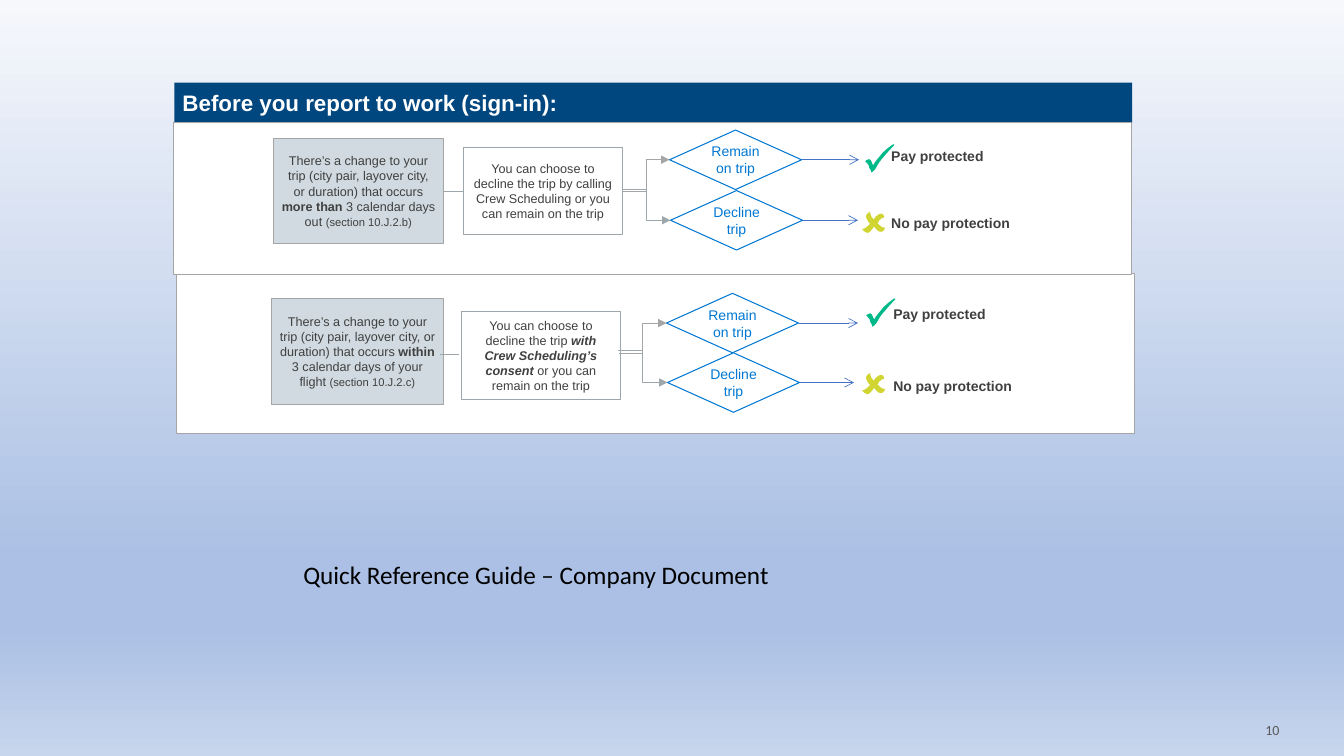
from lxml import etree
from pptx import Presentation
from pptx.dml.color import RGBColor
from pptx.enum.shapes import MSO_CONNECTOR, MSO_SHAPE
from pptx.enum.text import MSO_ANCHOR, MSO_AUTO_SIZE, PP_ALIGN
from pptx.oxml.ns import qn
from pptx.util import Pt

RECT, STEP, GEM = MSO_SHAPE.RECTANGLE, MSO_SHAPE.FLOWCHART_PROCESS, MSO_SHAPE.FLOWCHART_DECISION
LINE, ELBOW = MSO_CONNECTOR.STRAIGHT, MSO_CONNECTOR.ELBOW
LEFT, MID, RIGHT = PP_ALIGN.LEFT, PP_ALIGN.CENTER, PP_ALIGN.RIGHT

PX = 9144
INSET = 8
HUES = {
    "navy": "00467F", "blue": "0078D2", "arrow": "4472C4", "edge": "A5A5A5",
    "steel": "9DA6AB", "mist": "D0DAE0", "white": "FFFFFF", "black": "000000",
    "ink": "404040", "grey": "595959", "green": "00B989", "lime": "D1D532",
}
SKY = [(0, "F6F8FC"), (74, "ABC0E4"), (83, "ABC0E4"), (100, "C7D5ED")]
HEAD = ("Before you report to work (sign-in):", (173, 82, 950, 40))
NOTE = ("Quick Reference Guide – Company Document", (291, 550, 617, 40))
PAGE = ("10", (1233, 716, 36, 17))
CAUSE = "There’s a change to your trip (city pair, layover city, or duration) that occurs "

TICK = [(28, 0), (28, 0, 29, 1, 29, 1), (26, 4, 23, 7, 19, 12), (15, 16, 12, 21, 10, 25),
        (8, 27, 7, 28, 6, 28), (6, 27, 6, 26, 5, 25), (4, 23), (4, 21, 3, 20, 2, 19),
        (1, 18, 1, 17, 0, 17), (1, 16, 3, 15, 4, 15), (5, 15, 6, 16, 7, 19), (8, 21),
        (10, 17, 14, 13, 17, 9), (21, 5, 25, 2, 28, 0)]
CROSS = [(12, 15), (11, 16), (9, 19, 7, 21, 6, 21), (4, 21, 2, 20, 0, 17), (1, 17),
         (3, 17, 5, 15, 8, 12), (7, 11), (5, 8, 4, 6, 4, 5), (4, 3, 5, 2, 8, 0),
         (8, 2, 9, 5, 11, 7), (11, 8), (12, 7), (14, 4, 17, 2, 19, 2),
         (20, 2, 22, 3, 22, 6), (21, 6, 20, 6, 19, 7), (18, 8, 16, 9, 16, 11), (15, 12),
         (16, 12), (18, 14, 20, 16, 23, 16), (22, 19, 20, 20, 19, 20),
         (17, 20, 15, 19, 13, 16), (12, 15)]

CASES = [
    {"panel": (175, 271, 950, 159), "cause": (269, 296, 171, 105), "choice": (458, 309, 157, 87),
     "why": [(CAUSE, ""), ("within ", "b"), ("3 calendar days of your flight ", ""), ("(section 10.J.2.c)", "s")],
     "pick": [("You can choose to decline the trip ", ""), ("with Crew Scheduling’s consent ", "bi"),
              ("or you can remain on the trip", "")],
     "link": (436, 352, 455, 352),
     "ends": [{"gem": (661, 291), "from": (614, 351), "tip": 851, "label": (878, 301), "icon": (859, 296)},
              {"gem": (662, 350), "from": (613, 348), "tip": 847, "label": (878, 368), "icon": (855, 370)}]},
    {"panel": (172, 122, 950, 150), "cause": (271, 137, 169, 105), "choice": (460, 146, 157, 87),
     "why": [(CAUSE, ""), ("more than ", "b"), ("3 calendar days out ", ""), ("(section 10.J.2.b)", "s")],
     "pick": [("You can choose to decline the trip by calling Crew Scheduling or you can remain on the trip", "")],
     "link": None,
     "ends": [{"gem": (664, 129), "from": (618, 190), "tip": 852, "label": (876, 145), "icon": (858, 143)},
              {"gem": (665, 189), "from": (617, 188), "tip": 851, "label": (876, 206), "icon": (855, 210)}]},
]
KINDS = [("Remain on trip", "Pay protected", (110, 20), TICK, "green", "edge"),
         ("Decline trip", "No pay protection", (140, 30), CROSS, "lime", "steel")]


def hue(name):
    return RGBColor.from_string(HUES[name])


def emu(*vals):
    return [round(v * PX) for v in vals]


def write(shape, runs, size, color, align=MID, font="Arial", bold=False, inset=INSET, anchor=MSO_ANCHOR.MIDDLE):
    frame = shape.text_frame
    frame.auto_size = MSO_AUTO_SIZE.NONE
    frame.word_wrap = True
    frame.vertical_anchor = anchor
    frame.margin_left = frame.margin_right = frame.margin_top = frame.margin_bottom = inset * PX
    para = frame.paragraphs[0]
    para.alignment = align
    for text, style in runs:
        run = para.add_run()
        run.text = text
        run.font.name = font
        run.font.size = Pt(size - 1 if "s" in style else size)
        run.font.bold = bold or "b" in style
        run.font.italic = "i" in style
        run.font.color.rgb = hue(color)


def block(kind, box, fill, edge, width=0.75):
    shape = shapes.add_shape(kind, *emu(*box))
    shape.shadow.inherit = False
    shape.fill.solid()
    shape.fill.fore_color.rgb = hue(fill)
    shape.line.color.rgb = hue(edge)
    shape.line.width = Pt(width)
    return shape


def wire(kind, ends, color, width, head=None):
    line = shapes.add_connector(kind, *emu(*ends))
    line.line.color.rgb = hue(color)
    line.line.width = Pt(width)
    if head:
        etree.SubElement(line.line._get_or_add_ln(), qn("a:tailEnd"), type=head)
    etree.SubElement(line._element.spPr, qn("a:effectLst"))
    return line


def trace(path):
    pts = [path[0]]
    for seg in path[1:]:
        if len(seg) == 2:
            pts.append(seg)
            continue
        ctrl = [pts[-1], seg[:2], seg[2:4], seg[4:]]
        for t in (0.25, 0.5, 0.75, 1):
            mix = ((1 - t) ** 3, 3 * t * (1 - t) ** 2, 3 * t * t * (1 - t), t ** 3)
            pts.append(tuple(sum(m * p[a] for m, p in zip(mix, ctrl)) for a in (0, 1)))
    return pts


def icon(path, x, y, color):
    pts = [emu(x + u, y + v) for u, v in trace(path)]
    pen = shapes.build_freeform(*pts[0], scale=1.0)
    pen.add_line_segments(pts[1:], close=True)
    mark = pen.convert_to_shape()
    mark.shadow.inherit = False
    mark.fill.solid()
    mark.fill.fore_color.rgb = hue(color)
    mark.line.fill.background()


def draw(case):
    block(RECT, case["panel"], "white", "edge")
    cause = block(RECT, case["cause"], "mist", "edge")
    write(cause, case["why"], 9, "ink")
    choice = block(STEP, case["choice"], "white", "steel")
    write(choice, case["pick"], 9, "ink")
    link = wire(LINE, case["link"] or (0, 0, 0, 0), "steel", 0.5)
    if not case["link"]:
        link.begin_connect(cause, 3)
        link.end_connect(choice, 1)
    for end, (ask, result, size, path, color, edge) in zip(case["ends"], KINDS):
        x, y = end["gem"]
        gem = block(GEM, (x, y, 131, 59), "white", "blue")
        write(gem, [(ask, "")], 10, "blue")
        label = block(RECT, end["label"] + size, "white", "white", 1.5)
        write(label, [(result, "")], 10, "ink", LEFT, bold=True)
        mid = y + 29.5
        fork = wire(ELBOW, end["from"] + (x, mid), edge, 0.75, "triangle")
        fork.end_connect(gem, 1)
        out = wire(LINE, (x + 131, mid, end["tip"], mid), "arrow", 0.5, "arrow")
        out.begin_connect(gem, 3)
        icon(path, *end["icon"], color)


deck = Presentation()
deck.slide_width, deck.slide_height = emu(1333, 750)
slide = deck.slides.add_slide(deck.slide_layouts[5])
shapes = slide.shapes

back = slide.background.fill
back.gradient()
back.gradient_angle = 270
stops = back._fill._gradFill.find(qn("a:gsLst"))
for old in list(stops):
    stops.remove(old)
for pos, code in SKY:
    stop = etree.SubElement(stops, qn("a:gs"), pos=str(pos * 1000))
    etree.SubElement(stop, qn("a:srgbClr"), val=code)

title = shapes.title
title.left, title.top, title.width, title.height = emu(*HEAD[1])
title.fill.solid()
title.fill.fore_color.rgb = hue("navy")
write(title, [(HEAD[0], "")], 16, "white", LEFT, bold=True)

for case in CASES:
    draw(case)

note = shapes.add_textbox(*emu(*NOTE[1]))
write(note, [(NOTE[0], "")], 18, "black", LEFT, "Calibri", inset=10)
page = shapes.add_textbox(*emu(*PAGE[1]))
write(page, [(PAGE[0], "")], 10, "grey", RIGHT, "Calibri", inset=0, anchor=MSO_ANCHOR.BOTTOM)

deck.save("out.pptx")
